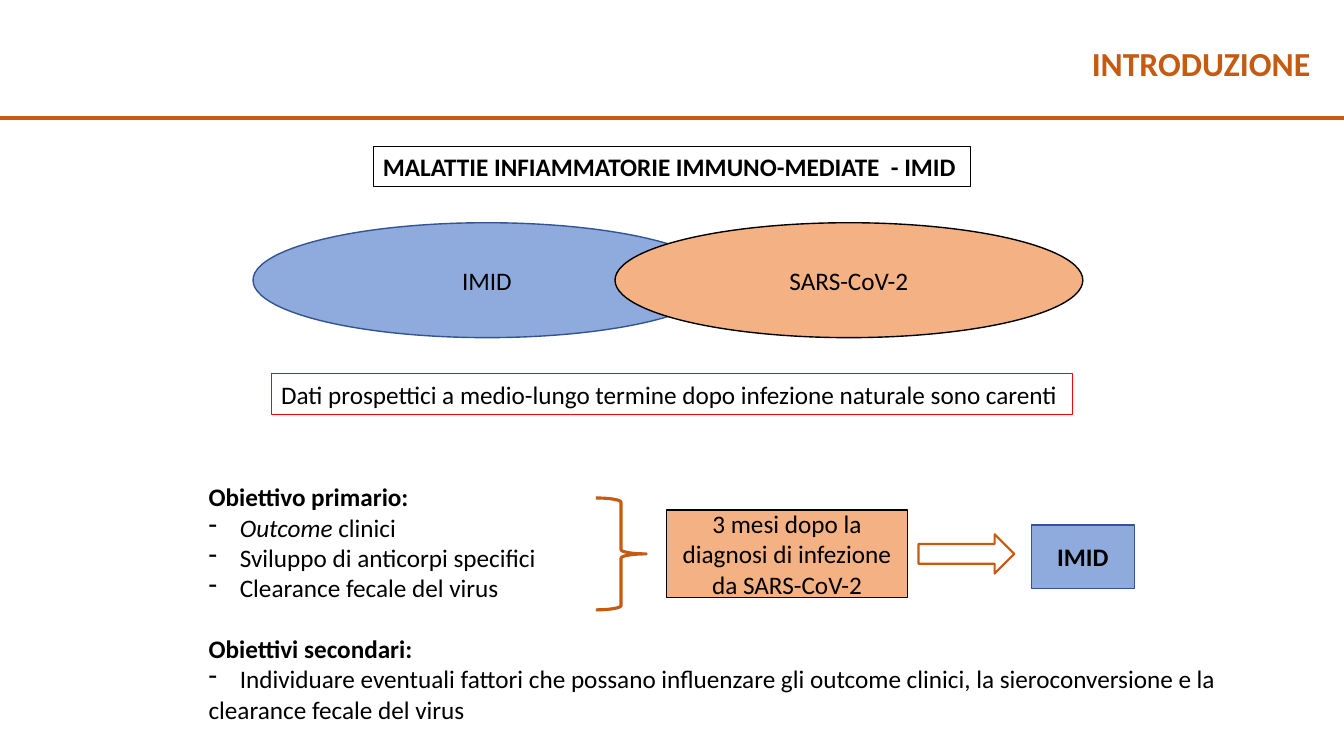
from lxml import etree
from pptx import Presentation
from pptx.dml.color import RGBColor
from pptx.enum import shapes, text
from pptx.oxml import ns
from pptx.util import Inches, Pt

COLORS = {"rust": "C55A11", "blue": "8FAADC", "navy": "325491",
          "orange": "F4B183", "black": "000000", "red": "FF0000"}
FONT = "Calibri"
SIZE = 18
INDENT = 0.31

KIND = shapes.MSO_SHAPE
LEFT, CENTER = text.PP_ALIGN.LEFT, text.PP_ALIGN.CENTER
TOP, MIDDLE = text.MSO_ANCHOR.TOP, text.MSO_ANCHOR.MIDDLE

RULE_Y = 1.17
TITLE = ("INTRODUZIONE", (10.73, 0.38, 2.39, 0.5))

FIGURES = [
    (KIND.OVAL, (2.51, 2.21, 4.64, 1.14), "blue", "navy", 1, "IMID", False),
    (KIND.OVAL, (6.1, 2.21, 4.64, 1.14), "orange", "black", 1, "SARS-CoV-2", False),
    (KIND.RECTANGLE, (3.7, 1.45, 5.93, 0.4), None, "black", 0.75,
     "MALATTIE INFIAMMATORIE IMMUNO-MEDIATE  - IMID", True),
    (KIND.RECTANGLE, (2.69, 3.71, 7.95, 0.4), None, "red", 0.75,
     "Dati prospettici a medio-lungo termine dopo infezione naturale sono carenti", False),
    (KIND.RIGHT_BRACE, (5.91, 4.94, 0.5, 1.11), None, "rust", 2.25, "", False),
    (KIND.RECTANGLE, (6.61, 5.06, 2.39, 0.87), "orange", "black", 1,
     "3 mesi dopo la diagnosi di infezione da SARS-CoV-2", False),
    (KIND.RIGHT_ARROW, (9.11, 5.3, 0.95, 0.39), None, "rust", 1.5, "", False),
    (KIND.RECTANGLE, (10.23, 5.21, 1.02, 0.63), "blue", "navy", 1, "IMID", True),
]

GOALS_AT = (1.97, 4.73, 10.38, 2.52)
GOALS = [
    ("heading", "Obiettivo primario:"),
    ("bullet", "Outcome", " clinici"),
    ("bullet", "Sviluppo di anticorpi specifici"),
    ("bullet", "Clearance fecale del virus"),
    ("heading", "Obiettivi secondari:"),
    ("bullet", "Individuare eventuali fattori che possano influenzare gli outcome clinici, "
               "la sieroconversione e la"),
    ("plain", "clearance fecale del virus"),
]


def color(name):
    return RGBColor.from_string(COLORS[name])


def place(at):
    return [Inches(length) for length in at]


def style(para, bold=False, size=SIZE, ink="black", align=LEFT):
    para.alignment = align
    para.font.name = FONT
    para.font.size = Pt(size)
    para.font.bold = bold
    para.font.color.rgb = color(ink)


def add_dash(para):
    props = para._p.get_or_add_pPr()
    props.set("marL", str(Inches(INDENT)))
    props.set("indent", str(-Inches(INDENT)))
    bullet = etree.Element(ns.qn("a:buChar"), char="-")
    props.insert_element_before(bullet, "a:tabLst", "a:defRPr", "a:extLst")


def add_box(page, at):
    box = page.shapes.add_textbox(*place(at))
    box.text_frame.word_wrap = True
    return box.text_frame


def add_rule(page, width):
    rule = page.shapes.add_connector(shapes.MSO_CONNECTOR.STRAIGHT,
                                     0, Inches(RULE_Y), width, Inches(RULE_Y))
    rule.line.color.rgb = color("rust")
    rule.line.width = Pt(3)
    etree.SubElement(rule._element.spPr, ns.qn("a:effectLst"))


def add_figure(page, kind, at, fill, line, weight, label, bold):
    shape = page.shapes.add_shape(kind, *place(at))
    shape.shadow.inherit = False
    if fill:
        shape.fill.solid()
        shape.fill.fore_color.rgb = color(fill)
    else:
        shape.fill.background()
    shape.line.color.rgb = color(line)
    shape.line.width = Pt(weight)
    if label:
        frame = shape.text_frame
        frame.word_wrap = True
        frame.vertical_anchor = MIDDLE if fill else TOP
        frame.text = label
        style(frame.paragraphs[0], bold, align=CENTER if fill else LEFT)


def add_goals(page):
    frame = add_box(page, GOALS_AT)
    for index, (role, *parts) in enumerate(GOALS):
        para = frame.add_paragraph() if index else frame.paragraphs[0]
        for part in parts:
            span = para.add_run()
            span.text = part
            if part == "Outcome":
                span.font.italic = True
        style(para, bold=role == "heading")
        if role == "heading" and index:
            para.space_before = Pt(22)
        if role == "bullet":
            add_dash(para)


def main():
    deck = Presentation()
    deck.slide_width, deck.slide_height = Inches(13.33), Inches(7.5)
    page = deck.slides.add_slide(deck.slide_layouts[6])
    add_rule(page, deck.slide_width)
    title, title_at = TITLE
    frame = add_box(page, title_at)
    frame.text = title
    style(frame.paragraphs[0], bold=True, size=24, ink="rust")
    for figure in FIGURES:
        add_figure(page, *figure)
    add_goals(page)
    deck.save("out.pptx")


if __name__ == "__main__":
    main()
